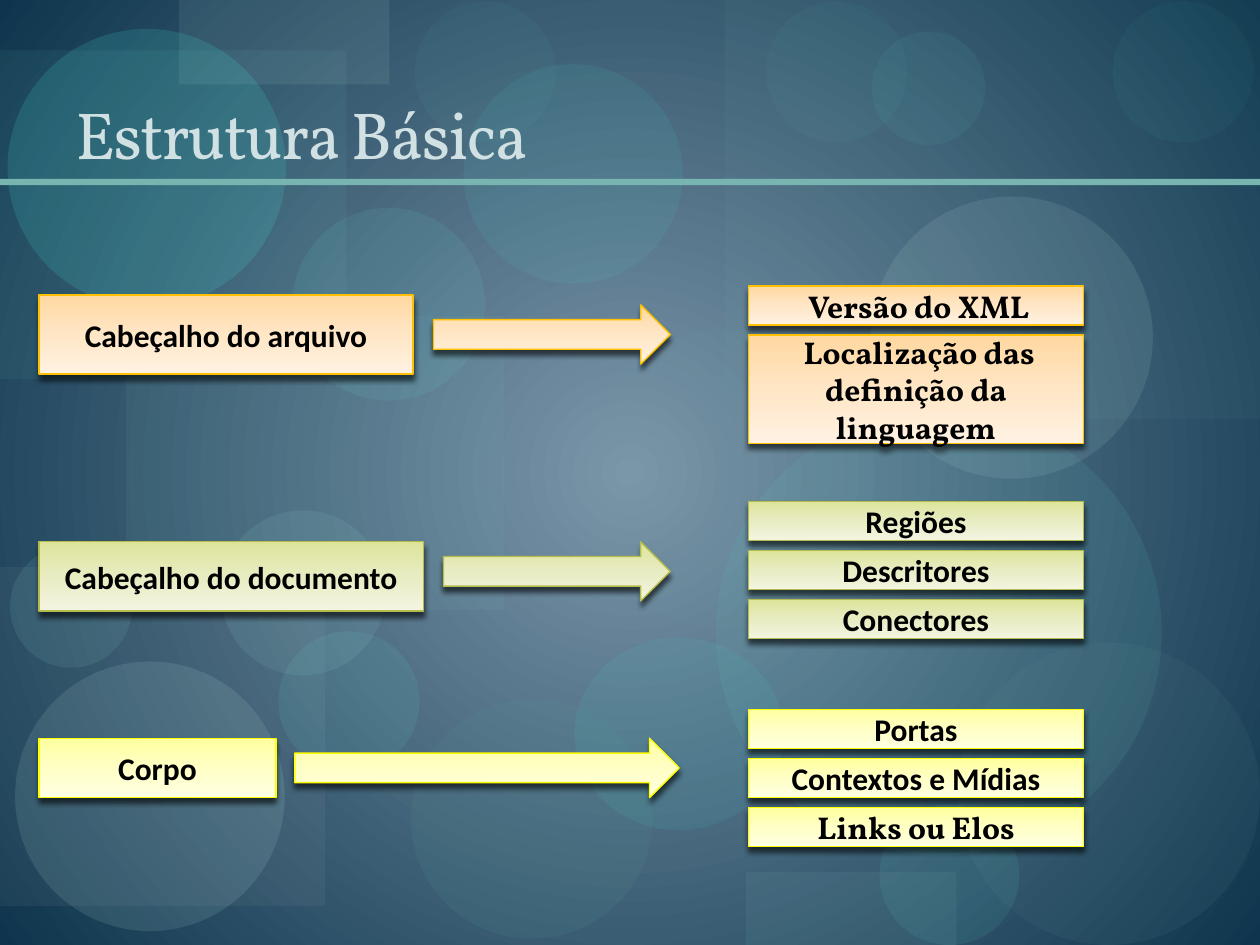
import pptx
import pptx.dml.color
import pptx.enum.shapes
import pptx.enum.text
import pptx.oxml
import pptx.oxml.ns
import pptx.util
from pptx.util import Inches

RGBColor = pptx.dml.color.RGBColor
MSO_SHAPE = pptx.enum.shapes.MSO_SHAPE
qn = pptx.oxml.ns.qn
NAMESPACE = pptx.oxml.ns.nsdecls("a")

BLACK = RGBColor(0x00, 0x00, 0x00)
TEAL = RGBColor(0x79, 0xB5, 0xB0)
TITLE_COLOR = RGBColor(0xD1, 0xE1, 0xE3)
GRAY = RGBColor(0xB2, 0xB7, 0xBA)
SAGE = RGBColor(0x70, 0xA3, 0x9E)
SEA = RGBColor(0x54, 0x97, 0x91)
AQUA = RGBColor(0x65, 0xE8, 0xDC)
PALE = RGBColor(0xC1, 0xE8, 0xE4)
BRIGHT = RGBColor(0x44, 0xEA, 0xDC)
MINT = RGBColor(0x77, 0xD6, 0xCE)
MIST = RGBColor(0xBE, 0xD7, 0xD4)
FOAM = RGBColor(0x97, 0xDC, 0xD6)
LAGOON = RGBColor(0x61, 0xCD, 0xC4)

BACKGROUND = [(0, RGBColor(0x7B, 0x96, 0xAA)), (100, RGBColor(0x0E, 0x35, 0x4D))]
ORANGE = {
    "stops": [(0, RGBColor(0xFF, 0xD8, 0xA0)), (50, RGBColor(0xFF, 0xE6, 0xC5)),
              (100, RGBColor(0xFF, 0xF2, 0xE3))],
    "line": RGBColor(0xFF, 0xC0, 0x00),
}
GREEN = {
    "stops": [(0, RGBColor(0xDD, 0xE4, 0x9A)), (50, RGBColor(0xE8, 0xEC, 0xC2)),
              (100, RGBColor(0xF3, 0xF5, 0xE1))],
    "line": RGBColor(0xB4, 0xBC, 0x4C),
}
YELLOW = {
    "stops": [(0, RGBColor(0xFF, 0xFF, 0xA0)), (50, RGBColor(0xFF, 0xFF, 0xC5)),
              (100, RGBColor(0xFF, 0xFF, 0xE3))],
    "line": RGBColor(0xFF, 0xFF, 0x00),
}

RECTANGLE, ELLIPSE, ARROW = MSO_SHAPE.RECTANGLE, MSO_SHAPE.OVAL, MSO_SHAPE.RIGHT_ARROW
DECORATIONS = [
    (RECTANGLE, (1, 2.51, 3, 2.33), TEAL, 9),
    (ELLIPSE, (3.26, 5.55, 1.92, 1.9), SEA, 13),
    (RECTANGLE, (5.75, 0, 4.25, 3.33), TEAL, 6),
    (RECTANGLE, (0, 4.5, 2.58, 2.69), GRAY, 8),
    (ELLIPSE, (4.57, 2.61, 2.38, 2.38), SAGE, 8),
    (ELLIPSE, (6.98, 6.39, 1.11, 1.11), AQUA, 9),
    (ELLIPSE, (6.91, 1.56, 2.24, 2.24), PALE, 11),
    (ELLIPSE, (0.12, 5.25, 2.14, 2.14), PALE, 12),
    (ELLIPSE, (2.21, 5.01, 1.12, 1.12), AQUA, 9),
    (ELLIPSE, (4.56, 5.06, 1.66, 1.53), BRIGHT, 8),
    (RECTANGLE, (0, 0.4, 2.75, 2.61), MINT, 7),
    (RECTANGLE, (1.42, 0, 1.67, 0.67), MIST, 10),
    (ELLIPSE, (0.06, 0.23, 2.21, 2.21), BRIGHT, 15),
    (ELLIPSE, (0.08, 4.33, 0.97, 0.97), FOAM, 10),
    (ELLIPSE, (2.32, 1.65, 1.53, 1.53), AQUA, 9),
    (ELLIPSE, (3.68, 0.51, 1.74, 1.74), BRIGHT, 8),
    (ELLIPSE, (5.68, 3.25, 3.54, 3.54), LAGOON, 10),
    (ELLIPSE, (6.08, 0.01, 1.12, 1.12), AQUA, 4),
    (ELLIPSE, (7.6, 5.1, 2.4, 2.4), SAGE, 8),
    (ELLIPSE, (1.75, 4.05, 1.31, 1.31), FOAM, 10),
    (ELLIPSE, (6.92, 0.25, 0.9, 0.9), AQUA, 6),
    (ELLIPSE, (8.83, 0.01, 1.12, 1.12), AQUA, 4),
    (RECTANGLE, (5.92, 6.92, 1.67, 0.58), TEAL, 10),
    (ELLIPSE, (3.29, 0.01, 1.12, 1.12), AQUA, 4),
    (RECTANGLE, (0, 1.42, 10, 0.05), TEAL, 100),
]

TITLE = "Estrutura Básica"
ITEM_LEFT, ITEM_WIDTH, ITEM_HEIGHT, ITEM_GAP = 5.94, 2.66, 0.31, 0.08
SECTIONS = [
    {"label": "Cabeçalho do arquivo", "theme": ORANGE,
     "box": (0.31, 2.34, 2.97, 0.63), "arrow": (3.44, 2.42, 1.88, 0.47), "top": 2.27,
     "items": [(" Versão do XML", "Vollkorn", ITEM_HEIGHT),
               (" Localização das definição da linguagem", "Vollkorn", 0.86)]},
    {"label": "Cabeçalho do documento", "theme": GREEN,
     "box": (0.31, 4.3, 3.05, 0.55), "arrow": (3.52, 4.3, 1.8, 0.47), "top": 3.98,
     "items": [("Regiões", "Calibri", ITEM_HEIGHT),
               ("Descritores", "Calibri", ITEM_HEIGHT),
               ("Conectores", "Calibri", ITEM_HEIGHT)]},
    {"label": "Corpo", "theme": YELLOW,
     "box": (0.31, 5.86, 1.88, 0.47), "arrow": (2.34, 5.86, 3.05, 0.47), "top": 5.63,
     "items": [("Portas", "Calibri", ITEM_HEIGHT),
               ("Contextos e Mídias", "Calibri", ITEM_HEIGHT),
               ("Links ou Elos", "Vollkorn", ITEM_HEIGHT)]},
]

LINEAR = '<a:lin ang="5400000" scaled="0"/>'
RADIAL = ('<a:path path="circle"><a:fillToRect l="50000" t="50000" '
          'r="50000" b="50000"/></a:path>')
SHADOW = (f'<a:outerShdw {NAMESPACE} blurRad="38100" dist="38100" dir="5400000" '
          'rotWithShape="0"><a:srgbClr val="000000"><a:alpha val="60000"/>'
          '</a:srgbClr></a:outerShdw>')


def replace_with_gradient(properties, stops, direction):
    stop_list = "".join(
        f'<a:gs pos="{position * 1000}"><a:srgbClr val="{color}"/></a:gs>'
        for position, color in stops)
    gradient = pptx.oxml.parse_xml(
        f'<a:gradFill {NAMESPACE} rotWithShape="1"><a:gsLst>{stop_list}</a:gsLst>'
        f'{direction}</a:gradFill>')
    properties.replace(properties.find(qn("a:solidFill")), gradient)


def add_shape(slide, kind, bounds, color):
    shape = slide.shapes.add_shape(kind, *map(Inches, bounds))
    shape.shadow.inherit = False
    shape.fill.solid()
    shape.fill.fore_color.rgb = color
    return shape


def add_decoration(slide, kind, bounds, color, opacity):
    shape = add_shape(slide, kind, bounds, color)
    shape.line.fill.background()
    if opacity < 100:
        fill_color = shape.element.spPr.find(qn("a:solidFill"))[0]
        fill_color.append(pptx.oxml.parse_xml(
            f'<a:alpha {NAMESPACE} val="{opacity * 1000}"/>'))


def write_text(shape, text, anchor, alignment, font_format):
    frame = shape.text_frame
    frame.word_wrap = True
    frame.vertical_anchor = anchor
    paragraph = frame.paragraphs[0]
    paragraph.alignment = alignment
    run = paragraph.add_run()
    run.text = text
    color = font_format.pop("color")
    for name, value in font_format.items():
        setattr(run.font, name, value)
    run.font.color.rgb = color
    return run


def add_block(slide, kind, bounds, theme, text=None, font="Calibri"):
    shape = add_shape(slide, kind, bounds, theme["line"])
    shape.line.color.rgb = theme["line"]
    shape.line.width = pptx.util.Pt(0.79)
    properties = shape.element.spPr
    replace_with_gradient(properties, theme["stops"], LINEAR)
    properties.find(qn("a:effectLst")).append(pptx.oxml.parse_xml(SHADOW))
    if text:
        write_text(shape, text, pptx.enum.text.MSO_ANCHOR.MIDDLE,
                   pptx.enum.text.PP_ALIGN.CENTER,
                   {"name": font, "size": pptx.util.Pt(18), "bold": True, "color": BLACK})


def add_title(slide):
    title = slide.shapes.add_textbox(*map(Inches, (0.5, 0.17, 9, 1.25)))
    run = write_text(title, TITLE, pptx.enum.text.MSO_ANCHOR.BOTTOM,
                     pptx.enum.text.PP_ALIGN.LEFT,
                     {"name": "Vollkorn", "size": pptx.util.Pt(38), "color": TITLE_COLOR})
    run.font._element.set("spc", "-100")


def main():
    presentation = pptx.Presentation()
    presentation.slide_width, presentation.slide_height = Inches(10), Inches(7.5)
    slide = presentation.slides.add_slide(presentation.slide_layouts[6])
    slide.background.fill.solid()
    background = next(slide.element.iter(qn("p:bgPr")))
    replace_with_gradient(background, BACKGROUND, RADIAL)

    for decoration in DECORATIONS:
        add_decoration(slide, *decoration)
    add_title(slide)
    for section in SECTIONS:
        theme = section["theme"]
        add_block(slide, RECTANGLE, section["box"], theme, section["label"])
        add_block(slide, ARROW, section["arrow"], theme)
        top = section["top"]
        for text, font, height in section["items"]:
            add_block(slide, RECTANGLE, (ITEM_LEFT, top, ITEM_WIDTH, height), theme, text, font)
            top += height + ITEM_GAP

    presentation.save("out.pptx")


if __name__ == "__main__":
    main()
